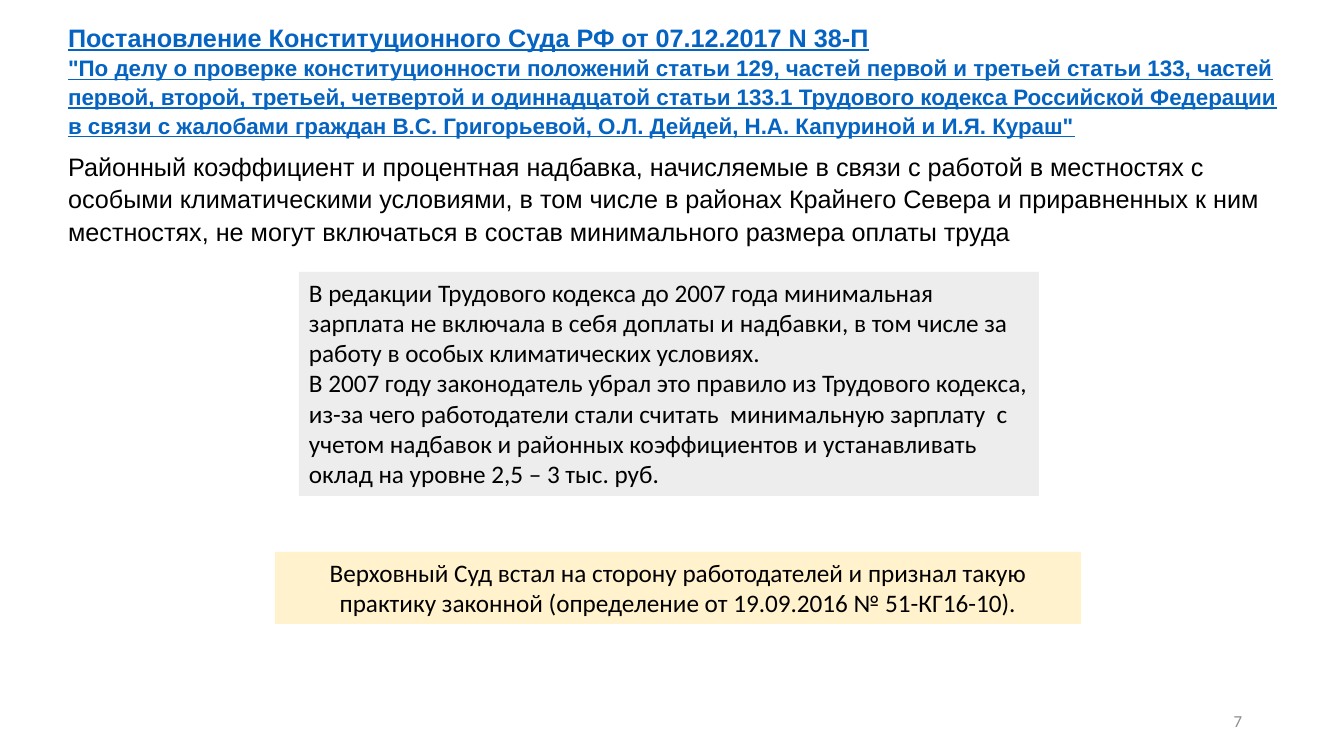
from copy import deepcopy

from pptx import Presentation, util as u
from pptx.dml import color
from pptx.enum import shapes, text
from pptx.oxml import ns
from lxml import etree

EMU_PER_PX = 12192000 / 1344
BLACK, LINK, GREY = "000000", "0563C1", "8C8C8C"


def rgb(code):
    return color.RGBColor.from_string(code)


def px(length):
    return u.Emu(round(length * EMU_PER_PX))


class CourtSlide:
    """Holds the style and the current slide, and adds its elements."""

    heading_font = "Arial"
    note_font = "Calibri"
    line_spacing = 1.07

    def __init__(self, deck):
        self.slide = deck.slides.add_slide(deck.slide_layouts[1])

    def place(self, holder, left, top, width, height):
        holder.left, holder.top = px(left), px(top)
        holder.width, holder.height = px(width), px(height)
        frame = holder.text_frame
        frame.auto_size = text.MSO_AUTO_SIZE.NONE
        frame.vertical_anchor = text.MSO_ANCHOR.TOP
        return frame

    def style(self, frame, font, code, sizes, align=text.PP_ALIGN.LEFT, bold=False):
        for paragraph in frame.paragraphs:
            paragraph.alignment = align
            for run, size in zip(paragraph.runs, sizes):
                run.font.name = font
                run.font.size = u.Pt(size)
                run.font.bold = run.font.underline = bold
                run.font.color.rgb = rgb(code)

    def space(self, paragraph):
        paragraph.line_spacing = self.line_spacing
        paragraph.space_before = u.Pt(0)
        paragraph.space_after = u.Pt(8)

    def title(self, wording, sizes, *box):
        frame = self.place(self.slide.shapes.title, *box)
        frame.text = wording
        self.style(frame, self.heading_font, LINK, sizes, bold=True)
        paragraph = frame.paragraphs[0]
        self.space(paragraph)
        line_break = paragraph._p.find(ns.qn("a:br"))
        line_break.append(deepcopy(paragraph.runs[0]._r.rPr))

    def body(self, wording, *box):
        frame = self.place(self.slide.placeholders[1], *box)
        frame.text = wording
        self.style(frame, self.heading_font, BLACK, [18])
        paragraph = frame.paragraphs[0]
        self.space(paragraph)
        properties = paragraph._p.get_or_add_pPr()
        properties.set("marL", "0")
        properties.set("indent", "0")
        etree.SubElement(properties, ns.qn("a:buNone"))

    def note(self, wording, fill, align, *box):
        panel = self.slide.shapes.add_shape(shapes.MSO_SHAPE.RECTANGLE, *map(px, box))
        panel.shadow.inherit = False
        panel.fill.solid()
        panel.fill.fore_color.rgb = rgb(fill)
        panel.line.fill.background()
        frame = panel.text_frame
        frame.text = wording
        frame.word_wrap = True
        frame.auto_size = text.MSO_AUTO_SIZE.SHAPE_TO_FIT_TEXT
        frame.vertical_anchor = text.MSO_ANCHOR.TOP
        self.style(frame, self.note_font, BLACK, [18], align)

    def page_number(self, number, *box):
        frame = self.slide.shapes.add_textbox(*map(px, box)).text_frame
        frame.text = str(number)
        frame.word_wrap = True
        frame.vertical_anchor = text.MSO_ANCHOR.MIDDLE
        self.style(frame, self.note_font, GREY, [12], text.PP_ALIGN.RIGHT)


def main():
    deck = Presentation()
    deck.slide_width, deck.slide_height = px(1344), px(756)
    ruling = CourtSlide(deck)
    ruling.title(
        "Постановление Конституционного Суда РФ от 07.12.2017 N 38-П\v"
        "\"По делу о проверке конституционности положений статьи 129, частей "
        "первой и третьей статьи 133, частей первой, второй, третьей, четвертой "
        "и одиннадцатой статьи 133.1 Трудового кодекса Российской Федерации "
        "в связи с жалобами граждан В.С. Григорьевой, О.Л. Дейдей, "
        "Н.А. Капуриной и И.Я. Кураш\"",
        [18, 16], 58, 15, 1229, 129)
    ruling.body(
        "Районный коэффициент и процентная надбавка, начисляемые в связи с "
        "работой в местностях с особыми климатическими условиями, в том числе "
        "в районах Крайнего Севера и приравненных к ним местностях, не могут "
        "включаться в состав минимального размера оплаты труда",
        58, 144, 1229, 110)
    ruling.note(
        "В редакции Трудового кодекса до 2007 года минимальная зарплата не "
        "включала в себя доплаты и надбавки, в том числе за работу в особых "
        "климатических условиях.\n"
        "В 2007 году законодатель убрал это правило из Трудового кодекса, "
        "из-за чего работодатели стали считать  минимальную зарплату  с учетом "
        "надбавок и районных коэффициентов и устанавливать оклад на уровне "
        "2,5 – 3 тыс. руб.",
        "EDEDED", text.PP_ALIGN.LEFT, 299, 272, 740, 224)
    ruling.note(
        "Верховный Суд встал на сторону работодателей и признал такую практику "
        "законной (определение от 19.09.2016 № 51-КГ16-10).",
        "FFF2CC", text.PP_ALIGN.CENTER, 275, 552, 806, 72)
    ruling.page_number(7, 950, 701, 302, 40)
    deck.save("out.pptx")


if __name__ == "__main__":
    main()
